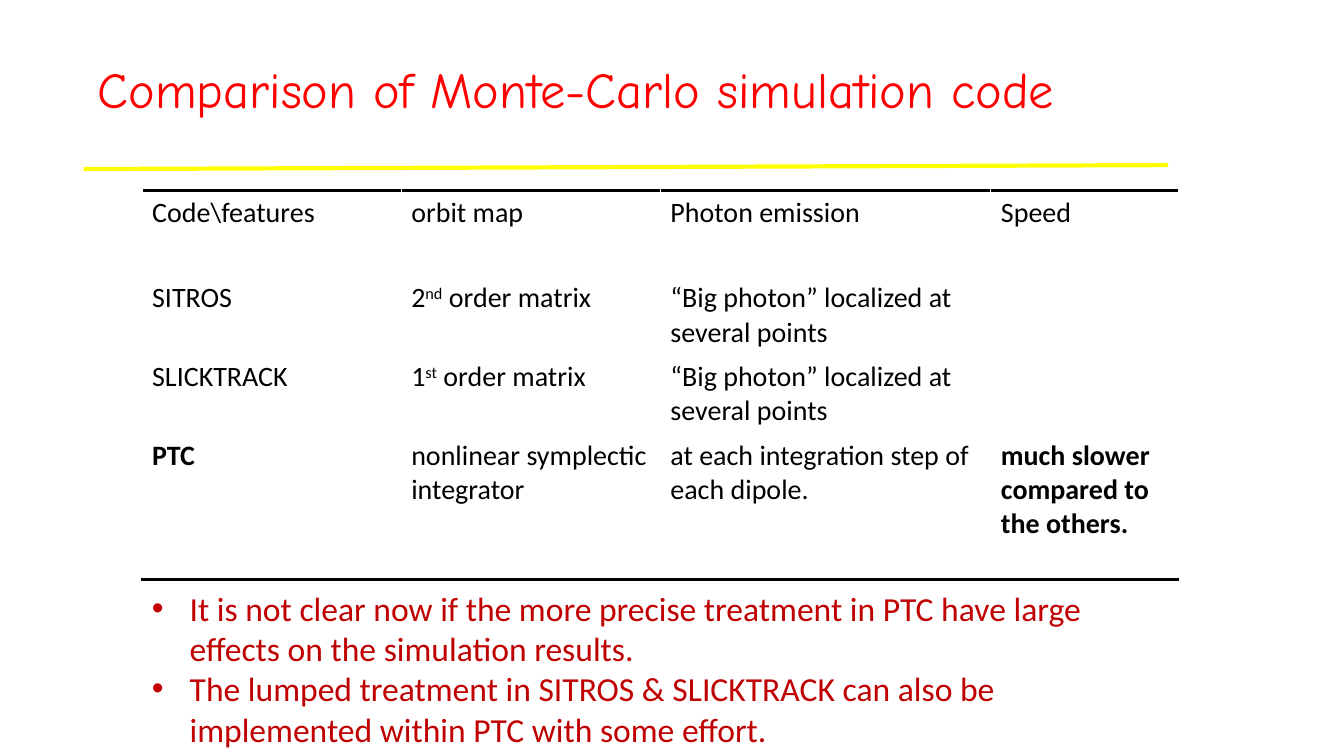
from lxml import etree
from pptx import Presentation
from pptx.dml.color import RGBColor
from pptx.enum.shapes import MSO_CONNECTOR
from pptx.enum.text import MSO_ANCHOR
from pptx.oxml import parse_xml
from pptx.oxml.ns import nsdecls, qn
from pptx.util import Cm, Pt

BLACK = RGBColor(0, 0, 0)
WHITE = RGBColor(255, 255, 255)
RED = RGBColor(255, 0, 0)
DARK_RED = RGBColor(192, 0, 0)
YELLOW = RGBColor(255, 255, 0)

COLUMN_WIDTHS = (6.53, 6.53, 8.33, 4.72)
ROW_HEIGHTS = (2.16, 1.98, 1.98, 3.68)
BIG_PHOTON = "“Big photon” localized at several points"
COMPARISON = (
    ("Code\\features", "orbit map", "Photon emission", "Speed"),
    ("SITROS", ("2", "nd", " order matrix"), BIG_PHOTON, ""),
    ("SLICKTRACK", ("1", "st", " order matrix"), BIG_PHOTON, ""),
    ("PTC", "nonlinear symplectic integrator",
     "at each integration step of each dipole.",
     "much slower compared to the others."),
)
BOLD_CELLS = {(3, 0), (3, 3)}
REMARKS = (
    "It is not clear now if the more precise treatment in PTC have large "
    "effects on the simulation results.",
    "The lumped treatment in SITROS & SLICKTRACK can also be implemented "
    "within PTC with some effort.",
)


def style(font, size, color, name="Calibri", bold=False):
    """Set the look of a font."""
    font.size, font.name, font.bold = Pt(size), name, bold
    font.color.rgb = color


def add_title(slide, left, top, width, height):
    """Place the heading and the yellow rule under it."""
    frame = slide.shapes.add_textbox(left, top, width, height).text_frame
    frame.word_wrap = True
    frame.vertical_anchor = MSO_ANCHOR.MIDDLE
    frame.text = "Comparison of Monte-Carlo simulation code"
    heading = frame.paragraphs[0]
    heading.line_spacing = 0.9
    style(heading.runs[0].font, 36, RED, "Comic Neue")

    rule_left, rule_top = left - Cm(0.1), top + height + Cm(0.1)
    rule = slide.shapes.add_connector(
        MSO_CONNECTOR.STRAIGHT, rule_left, rule_top,
        rule_left + Cm(27.33), rule_top - Cm(0.1))
    rule.line.color.rgb = YELLOW
    rule.line.width = Pt(3)
    etree.SubElement(rule._element.spPr, qn("a:effectLst"))


def add_border(cell, side):
    """Draw a black border on one side of a cell."""
    border = parse_xml(
        f'<a:{side} {nsdecls("a")} w="{Pt(2)}"><a:solidFill>'
        f'<a:srgbClr val="{BLACK}"/></a:solidFill></a:{side}>')
    cell._tc.get_or_add_tcPr().insert(0, border)


def fill_cell(cell, content, bold):
    """Write a cell, raising the middle part of a split text."""
    cell.fill.solid()
    cell.fill.fore_color.rgb = WHITE
    paragraph = cell.text_frame.paragraphs[0]
    style(paragraph.font, 20, BLACK)
    parts = (content,) if isinstance(content, str) else content
    for position, part in enumerate(parts):
        if part:
            run = paragraph.add_run()
            run.text = part
            style(run.font, 20, BLACK, bold=bold)
            if position == 1:
                run._r.get_or_add_rPr().set("baseline", "30000")


def add_comparison(slide, left, top):
    """Place the table of codes, ruled above and below."""
    table = slide.shapes.add_table(
        len(ROW_HEIGHTS), len(COLUMN_WIDTHS), left, top,
        Cm(sum(COLUMN_WIDTHS)), Cm(sum(ROW_HEIGHTS))).table
    table.first_row = table.horz_banding = False
    for column, width in zip(table.columns, COLUMN_WIDTHS):
        column.width = Cm(width)
    for r, (row, height) in enumerate(zip(table.rows, ROW_HEIGHTS)):
        row.height = Cm(height)
        for c, content in enumerate(COMPARISON[r]):
            cell = table.cell(r, c)
            fill_cell(cell, content, (r, c) in BOLD_CELLS)
            if r == 0:
                add_border(cell, "lnT")
            elif r == len(ROW_HEIGHTS) - 1:
                add_border(cell, "lnB")


def add_remarks(slide, left, top, width, height):
    """Place the bulleted remarks."""
    frame = slide.shapes.add_textbox(left, top, width, height).text_frame
    frame.word_wrap = True
    frame.text = "\n".join(REMARKS)
    for remark in frame.paragraphs:
        properties = remark._p.get_or_add_pPr()
        properties.set("marL", str(Cm(0.95)))
        properties.set("indent", str(-Cm(0.95)))
        etree.SubElement(properties, qn("a:buFont")).set("typeface", "Arial")
        etree.SubElement(properties, qn("a:buChar")).set("char", "•")
        style(remark.runs[0].font, 24, DARK_RED)


def main():
    """Build and save the slide."""
    deck = Presentation()
    deck.slide_width, deck.slide_height = Cm(33.87), Cm(19.05)
    slide = deck.slides.add_slide(deck.slide_layouts[6])
    add_title(slide, Cm(2.21), Cm(0.48), Cm(28.8), Cm(3.68))
    add_comparison(slide, Cm(3.58), Cm(4.8))
    add_remarks(slide, Cm(3.58), Cm(14.68), Cm(25.35), Cm(4.37))
    deck.save("out.pptx")


if __name__ == "__main__":
    main()
